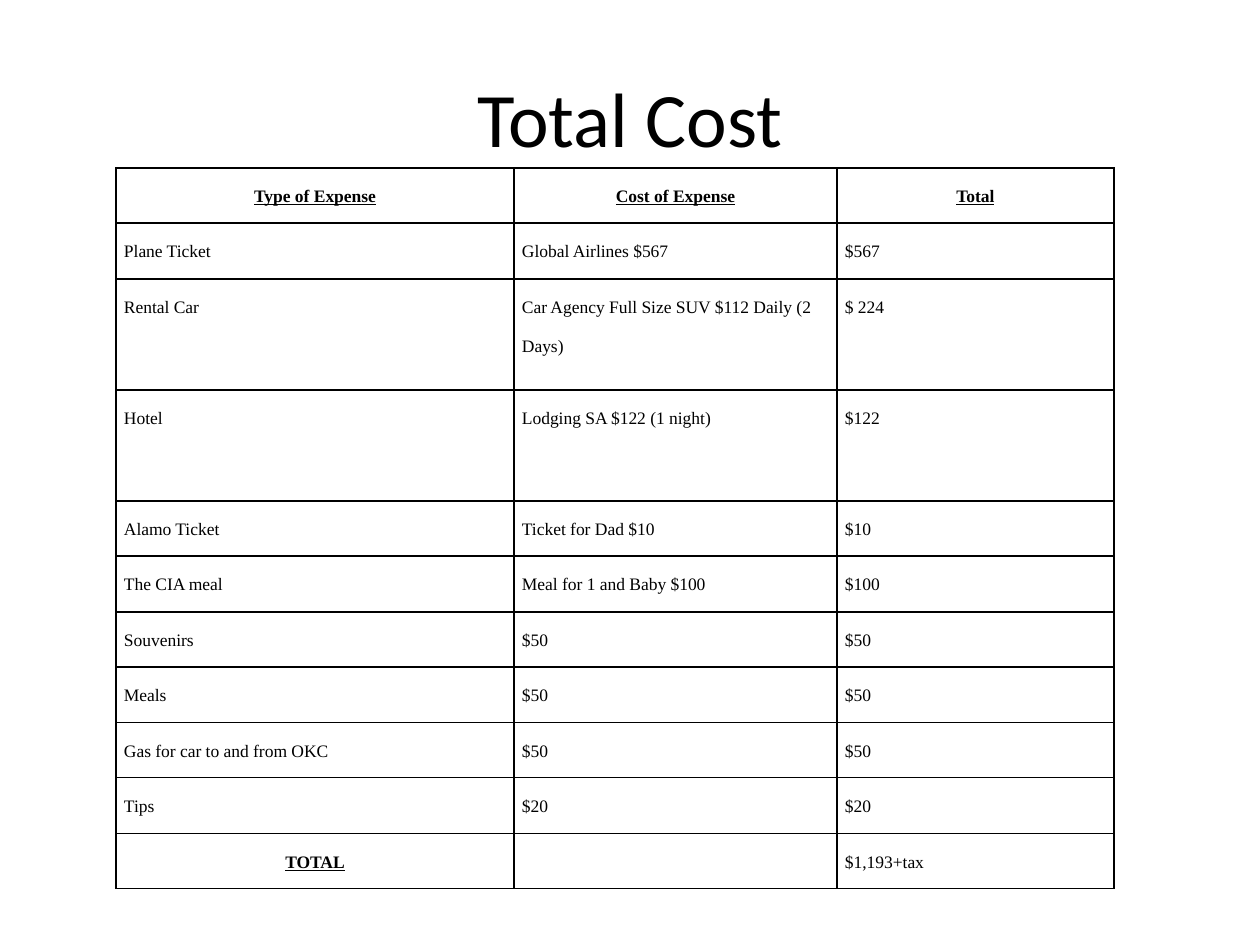
from pptx import Presentation
from pptx.dml.color import RGBColor
from pptx.enum.text import MSO_ANCHOR, PP_ALIGN
from pptx.oxml.ns import qn
from pptx.util import Pt
from lxml import etree

PX = 914400 // 126
BLACK = RGBColor(0, 0, 0)
LEFT, CENTER = PP_ALIGN.LEFT, PP_ALIGN.CENTER
TOP, MIDDLE = MSO_ANCHOR.TOP, MSO_ANCHOR.MIDDLE
TITLE_ONLY = 5

EXPENSES = [
    ("Type of Expense", "Cost of Expense", "Total"),
    ("Plane Ticket", "Global Airlines $567", "$567"),
    ("Rental Car", "Car Agency Full Size SUV $112 Daily (2 Days)", "$ 224"),
    ("Hotel", "Lodging SA $122 (1 night)", "$122"),
    ("Alamo Ticket", "Ticket for Dad $10", "$10"),
    ("The CIA meal", "Meal for 1 and Baby $100", "$100"),
    ("Souvenirs", "$50", "$50"),
    ("Meals", "$50", "$50"),
    ("Gas for car to and from OKC", "$50", "$50"),
    ("Tips", "$20", "$20"),
    ("TOTAL", "", "$1,193+tax"),
]
COLUMN_WIDTHS = [398, 323, 277]
TABLE_HEIGHT = 721
DOUBLE_ROWS = {"Rental Car", "Hotel"}
HEADINGS = {*EXPENSES[0], "TOTAL"}


def row_heights():
    """Share the table height by row units, rounding at the row edges."""
    units = [2 if row[0] in DOUBLE_ROWS else 1 for row in EXPENSES]
    edges = [round(TABLE_HEIGHT * sum(units[:count]) / sum(units))
             for count in range(len(units) + 1)]
    return [bottom - top for top, bottom in zip(edges, edges[1:])]


def set_values(target, values):
    for name, value in values.items():
        setattr(target, name, value)


class SlideBuilder:
    title_font = {"name": "Calibri", "size": Pt(44)}
    body_font = {"name": "Times New Roman", "size": Pt(10)}
    cell_format = {"margin_left": 8 * PX, "margin_right": 8 * PX,
                   "margin_top": 0, "margin_bottom": 0,
                   "vertical_anchor": TOP}

    def __init__(self, deck):
        self.page = deck.slides.add_slide(deck.slide_layouts[TITLE_ONLY])

    def fill_para(self, para, text, align, font):
        para.alignment = align
        if text:
            span = para.add_run()
            span.text = text
            set_values(span.font, font)
            span.font.color.rgb = BLACK

    def title(self, text, left, top, width, height):
        box = self.page.shapes.title
        set_values(box, {"left": left * PX, "top": top * PX,
                         "width": width * PX, "height": height * PX})
        box.text_frame.vertical_anchor = MIDDLE
        self.fill_para(box.text_frame.paragraphs[0], text, CENTER,
                       self.title_font)

    def borders(self, cell):
        properties = cell._tc.get_or_add_tcPr()
        for side in ("a:lnL", "a:lnR", "a:lnT", "a:lnB"):
            line = etree.SubElement(properties, qn(side), w=str(Pt(1)))
            fill = etree.SubElement(line, qn("a:solidFill"))
            etree.SubElement(fill, qn("a:srgbClr"), val=str(BLACK))

    def cell(self, cell, text):
        set_values(cell, self.cell_format)
        self.borders(cell)
        cell.fill.background()
        heading = text in HEADINGS
        para = cell.text_frame.paragraphs[0]
        para.line_spacing = 2.0
        self.fill_para(para, text, CENTER if heading else LEFT,
                       {**self.body_font, "bold": heading,
                        "underline": heading})

    def table(self, rows, left, top, widths, heights):
        table = self.page.shapes.add_table(
            len(rows), len(widths), left * PX, top * PX,
            sum(widths) * PX, sum(heights) * PX).table
        set_values(table, {"first_row": False, "horz_banding": False})
        for column, width in zip(table.columns, widths):
            column.width = width * PX
        for row, height, texts in zip(table.rows, heights, rows):
            row.height = height * PX
            for cell, text in zip(row.cells, texts):
                self.cell(cell, text)


def main():
    deck = Presentation()
    set_values(deck, {"slide_width": 1260 * PX, "slide_height": 945 * PX})
    builder = SlideBuilder(deck)

    # Heading
    builder.title("Total Cost", 63, 38, 1134, 158)

    # Expense table
    builder.table(EXPENSES, 116, 168, COLUMN_WIDTHS, row_heights())

    deck.save("out.pptx")


if __name__ == "__main__":
    main()
